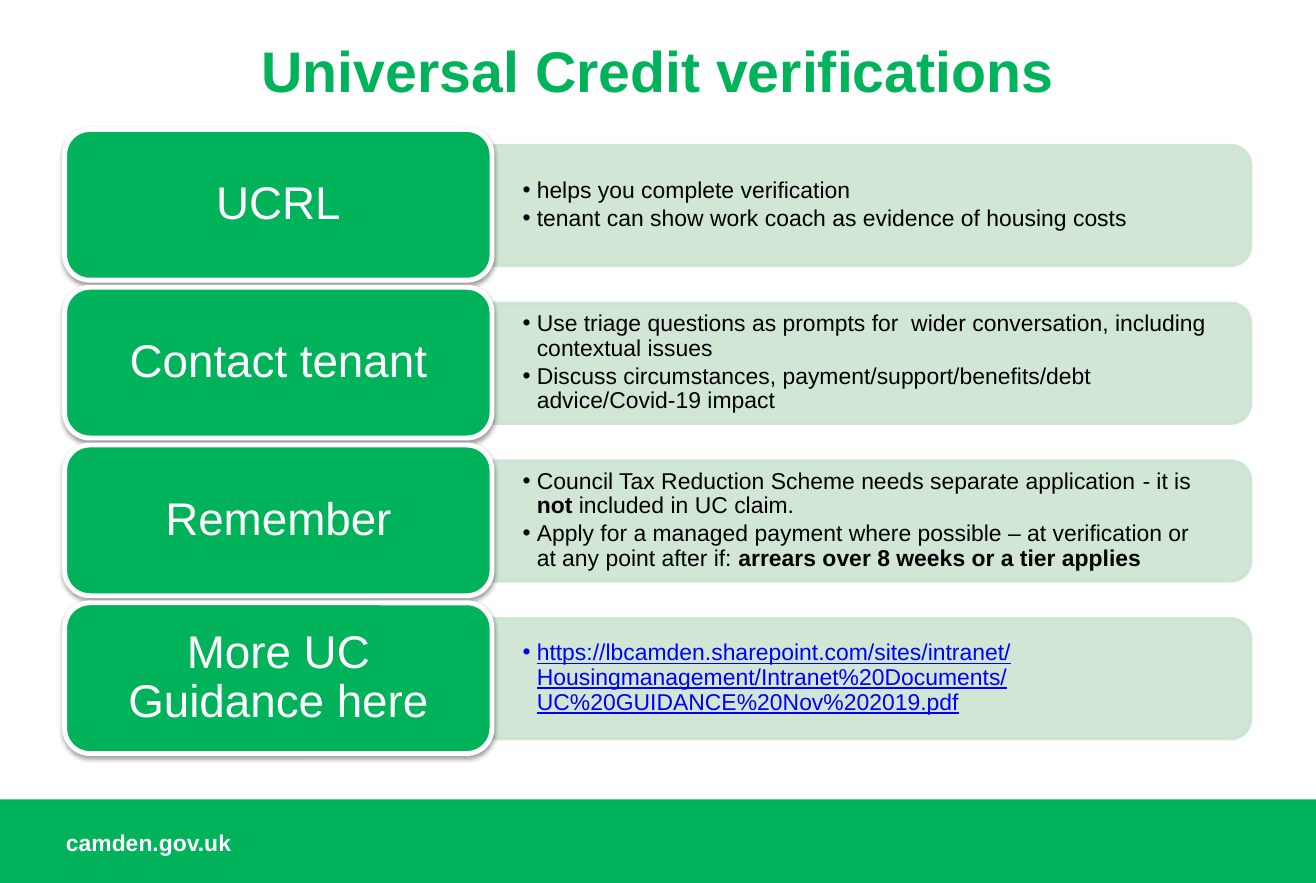
from lxml.etree import SubElement
from pptx import Presentation
from pptx.dml.color import RGBColor
from pptx.enum.shapes import MSO_SHAPE
from pptx.enum.text import MSO_ANCHOR, MSO_AUTO_SIZE, PP_ALIGN
from pptx.oxml.ns import qn
from pptx.util import Inches, Pt

GREEN, PALE, WHITE, BLACK, BLUE = "00B259", "CCE4D1", "FFFFFF", "000000", "0000FF"


def paint(shape, fill, line=None, width=0, opacity=100):
    shape.shadow.inherit = False
    shape.fill.solid()
    shape.fill.fore_color.rgb = RGBColor.from_string(fill)
    if line:
        shape.line.color.rgb = RGBColor.from_string(line)
        shape.line.width = Pt(width)
    else:
        shape.line.fill.background()
    if opacity < 100:
        for color in shape.element.spPr.iter(qn("a:srgbClr")):
            SubElement(color, qn("a:alpha"), val=str(opacity * 1000))


def write(shape, paragraphs, size, color, bold=False, align=PP_ALIGN.LEFT,
          anchor=MSO_ANCHOR.TOP, inset=(0, 0), spacing=1.0, after=0, bullet=False):
    frame = shape.text_frame
    frame.word_wrap = True
    frame.auto_size = MSO_AUTO_SIZE.NONE
    frame.vertical_anchor = anchor
    frame.margin_left = frame.margin_right = Inches(inset[0])
    frame.margin_top = frame.margin_bottom = Inches(inset[1])
    for number, runs in enumerate(paragraphs):
        paragraph = frame.add_paragraph() if number else frame.paragraphs[0]
        paragraph.alignment = align
        paragraph.line_spacing = spacing
        paragraph.space_before = Pt(0)
        paragraph.space_after = Pt(after)
        if bullet:
            properties = paragraph._p.get_or_add_pPr()
            properties.set("marL", str(Inches(0.12)))
            properties.set("indent", str(-Inches(0.12)))
            SubElement(properties, qn("a:buFont"), typeface="Arial")
            SubElement(properties, qn("a:buChar"), char="•")
        for text, style in runs:
            run = paragraph.add_run()
            run.text = text
            run.font.name = "Arial"
            run.font.size = Pt(size)
            run.font.bold = bold or style == "bold"
            run.font.italic = style == "italic"
            run.font.underline = style == "link"
            run.font.color.rgb = RGBColor.from_string(BLUE if style == "link" else color)


steps = [
    ("UCRL", [
        [("helps you complete verification", "")],
        [("tenant can show work coach as evidence of housing costs", "")],
    ]),
    ("Contact tenant", [
        [("Use triage questions as prompts for  wider conversation, including contextual issues", "")],
        [("Discuss circumstances, payment/support/benefits/debt advice/Covid-19 impact", "")],
    ]),
    ("Remember", [
        [("Council Tax Reduction Scheme needs separate application ", ""), ("-", "italic"),
         (" it is ", ""), ("not ", "bold"), ("included in UC claim.", "")],
        [("Apply for a managed payment where possible – at verification or at any point after if: ", ""),
         ("arrears over 8 weeks or a tier applies", "bold")],
    ]),
    ("More UC Guidance here", [
        [("https://lbcamden.sharepoint.com/sites/intranet/Housingmanagement/"
          "Intranet%20Documents/UC%20GUIDANCE%20Nov%202019.pdf", "link")],
    ]),
]

presentation = Presentation()
presentation.slide_width = Inches(11.18)
presentation.slide_height = Inches(7.5)
slide = presentation.slides.add_slide(presentation.slide_layouts.get_by_name("Comparison"))
shapes = slide.shapes

footer = shapes.add_shape(MSO_SHAPE.RECTANGLE, 0, Inches(6.79), Inches(11.18), Inches(0.71))
paint(footer, GREEN)
website = shapes.add_textbox(Inches(0.56), Inches(7.04), Inches(4.61), Inches(0.24))
write(website, [[("camden.gov.uk", "")]], 14, WHITE, bold=True)

title = shapes.title
title.left, title.top, title.width, title.height = map(Inches, (0.56, 0.3, 10.06, 0.79))
write(title, [[("Universal Credit verifications", "")]], 35, GREEN, bold=True, align=PP_ALIGN.CENTER)

for row, (heading, points) in enumerate(steps):
    top = 1.1 + 1.34 * row
    middle = top + 0.64

    panel = shapes.add_shape(MSO_SHAPE.ROUND_2_SAME_RECTANGLE, Inches(6.89), Inches(middle - 3.22),
                             Inches(1.02), Inches(6.45))
    panel.rotation = 90
    paint(panel, PALE, line=PALE, width=2, opacity=90)

    details = slide.placeholders[row + 1]
    details.left, details.top, details.width, details.height = map(Inches, (4.17, middle - 0.46, 6.4, 0.92))
    write(details, points, 14, BLACK, anchor=MSO_ANCHOR.MIDDLE, inset=(0.27, 0.14),
          spacing=0.9, after=2, bullet=True)
    panel.element.addnext(details.element)

    card = shapes.add_shape(MSO_SHAPE.ROUNDED_RECTANGLE, Inches(0.55), Inches(top), Inches(3.63), Inches(1.28))
    paint(card, GREEN, line=WHITE, width=3)
    write(card, [[(heading, "")]], 28, WHITE, align=PP_ALIGN.CENTER, anchor=MSO_ANCHOR.MIDDLE,
          inset=(0.18, 0.12), spacing=0.9)
    effects = card.element.spPr.find(qn("a:effectLst"))
    shadow = SubElement(effects, qn("a:outerShdw"), blurRad=str(Pt(3.1)), dist=str(Pt(1.6)),
                        dir="5400000", rotWithShape="0")
    shade = SubElement(shadow, qn("a:srgbClr"), val=BLACK)
    SubElement(shade, qn("a:alpha"), val="38000")

for spare in [holder for holder in slide.placeholders if not holder.text_frame.text]:
    spare.element.getparent().remove(spare.element)

presentation.save("out.pptx")
